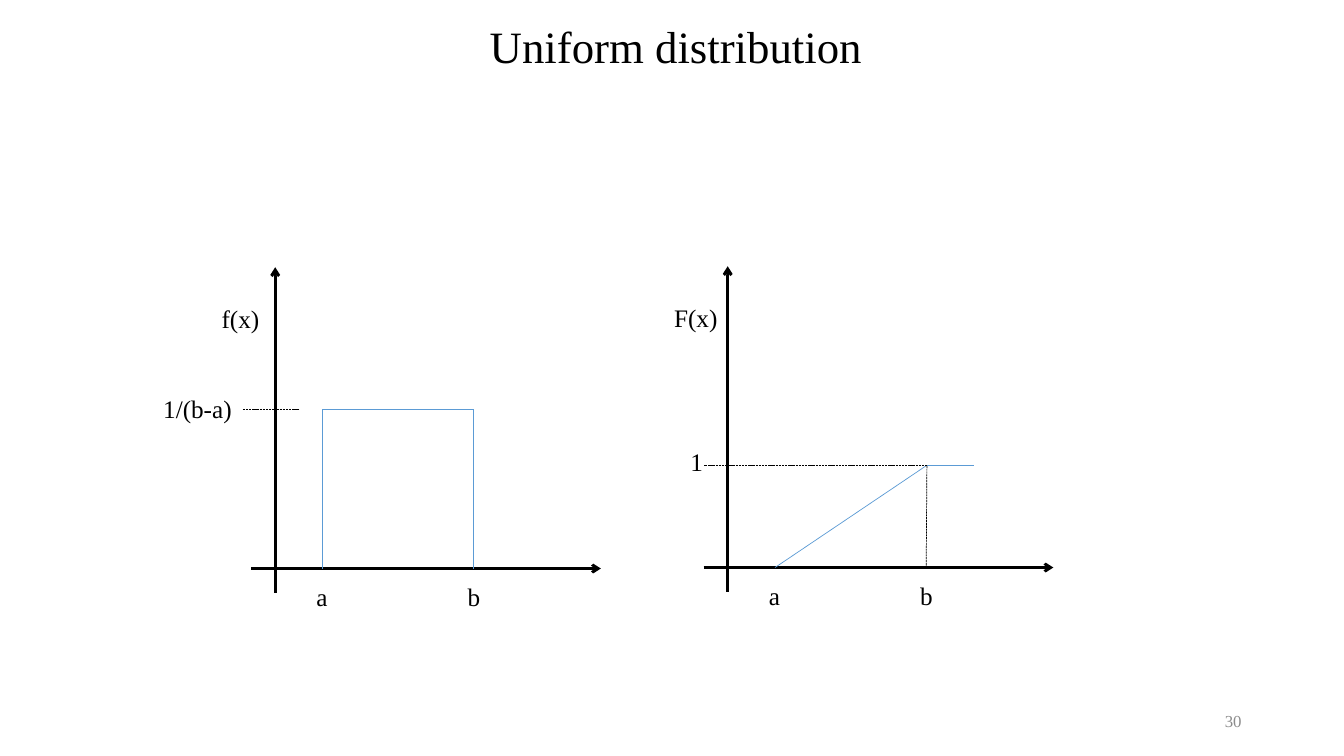
from dataclasses import dataclass

from lxml.etree import SubElement
from pptx import Presentation
from pptx.dml.color import RGBColor
from pptx.enum.dml import MSO_LINE
from pptx.enum.text import MSO_ANCHOR, MSO_AUTO_SIZE, PP_ALIGN
from pptx.oxml.ns import qn
from pptx.slide import Slide
from pptx.text.text import Font, TextFrame
from pptx.util import Pt

BLACK, BLUE, GREY = "000000", "5B9BD5", "8C8C8C"
FONT_NAME = "Times New Roman"
LABEL_HEIGHT = 29

# Plot coordinates: points from the origin of the axes, y upwards
A, B = 33.8, 141.8
DENSITY, ONE = 113.8, 72.7
AXIS_START, X_END, Y_END = -17.2, 232.6, 215.2


@dataclass
class Segment:
    start: tuple[float, float]
    end: tuple[float, float]
    color: str = BLUE
    width: float = 0.5
    dashed: bool = False
    arrow: bool = False


@dataclass
class Label:
    text: str
    left: float
    top: float
    width: float


@dataclass
class Plot:
    origin: tuple[float, float]
    segments: list[Segment]
    labels: list[Label]


AXES = [
    Segment((0, AXIS_START), (0, Y_END), BLACK, 2, arrow=True),
    Segment((AXIS_START, 0), (X_END, 0), BLACK, 2, arrow=True),
]
BOUNDS = [Label("a", 22.3, -5.8, 23), Label("b", 130.3, -5.8, 24.5)]

DENSITY_PLOT = Plot(
    (196.6, 406.1),
    [
        Segment((A, 0), (A, DENSITY)),
        Segment((A, DENSITY), (B, DENSITY)),
        Segment((B, DENSITY), (B, 0)),
        Segment((17.3, DENSITY), (-23, DENSITY), BLACK, dashed=True),
    ],
    [Label("f(x)", -45.4, 193, 41.8), Label("1/(b-a)", -87.1, 128.9, 65.5)],
)
CUMULATIVE_PLOT = Plot(
    (519.8, 405.4),
    [
        Segment((A, 0), (B, ONE)),
        Segment((B + 0.5, ONE), (B, 0), BLACK, dashed=True),
        Segment((B, ONE), (175.7, ONE)),
        Segment((B + 0.5, ONE), (AXIS_START, ONE), BLACK, dashed=True),
    ],
    [Label("F(x)", -45.4, 193, 46), Label("1", -33.8, 90, 23.8)],
)


def rgb(hex_color: str) -> RGBColor:
    return RGBColor.from_string(hex_color)


def style_font(font: Font, size: float, color: str) -> None:
    font.name = FONT_NAME
    font.size = Pt(size)
    font.color.rgb = rgb(color)


def write_line(frame: TextFrame, text: str, size: float, color: str = BLACK,
               align: PP_ALIGN = PP_ALIGN.LEFT) -> None:
    frame.text = text
    paragraph = frame.paragraphs[0]
    paragraph.alignment = align
    style_font(paragraph.runs[0].font, size, color)


def draw_segment(slide: Slide, origin: tuple[float, float], segment: Segment) -> None:
    x0, y0 = origin
    ends = [Pt(value) for x, y in (segment.start, segment.end) for value in (x0 + x, y0 - y)]
    connector = slide.shapes.add_connector(1, *ends)
    line = connector.line
    line.color.rgb = rgb(segment.color)
    line.width = Pt(segment.width)
    if segment.dashed:
        line.dash_style = MSO_LINE.SQUARE_DOT
    properties = connector._element.spPr
    if segment.arrow:
        SubElement(properties.find(qn("a:ln")), qn("a:tailEnd"), type="arrow")
    SubElement(properties, qn("a:effectLst"))


def draw_label(slide: Slide, origin: tuple[float, float], label: Label) -> None:
    x0, y0 = origin
    box = slide.shapes.add_textbox(
        Pt(x0 + label.left), Pt(y0 - label.top), Pt(label.width), Pt(LABEL_HEIGHT))
    frame = box.text_frame
    frame.word_wrap = False
    frame.auto_size = MSO_AUTO_SIZE.SHAPE_TO_FIT_TEXT
    write_line(frame, label.text, 18)


def draw_plot(slide: Slide, plot: Plot) -> None:
    for segment in AXES + plot.segments:
        draw_segment(slide, plot.origin, segment)
    for label in BOUNDS + plot.labels:
        draw_label(slide, plot.origin, label)


def set_title(slide: Slide) -> None:
    title = slide.shapes.title
    title.left, title.top, title.width, title.height = Pt(134), Pt(9.4), Pt(697.7), Pt(51)
    frame = title.text_frame
    frame.vertical_anchor = MSO_ANCHOR.TOP
    frame.auto_size = MSO_AUTO_SIZE.NONE
    write_line(frame, "Uniform distribution", 32, align=PP_ALIGN.CENTER)


def add_page_number(slide: Slide) -> None:
    box = slide.shapes.add_textbox(Pt(678), Pt(500.4), Pt(216), Pt(28.8))
    frame = box.text_frame
    frame.word_wrap = True
    frame.vertical_anchor = MSO_ANCHOR.MIDDLE
    write_line(frame, "30", 12, GREY, PP_ALIGN.RIGHT)


def main() -> None:
    presentation = Presentation()
    presentation.slide_width, presentation.slide_height = Pt(960), Pt(540)
    slide = presentation.slides.add_slide(presentation.slide_layouts.get_by_name("Title Only"))
    set_title(slide)
    for plot in (DENSITY_PLOT, CUMULATIVE_PLOT):
        draw_plot(slide, plot)
    add_page_number(slide)
    presentation.save("out.pptx")


if __name__ == "__main__":
    main()
